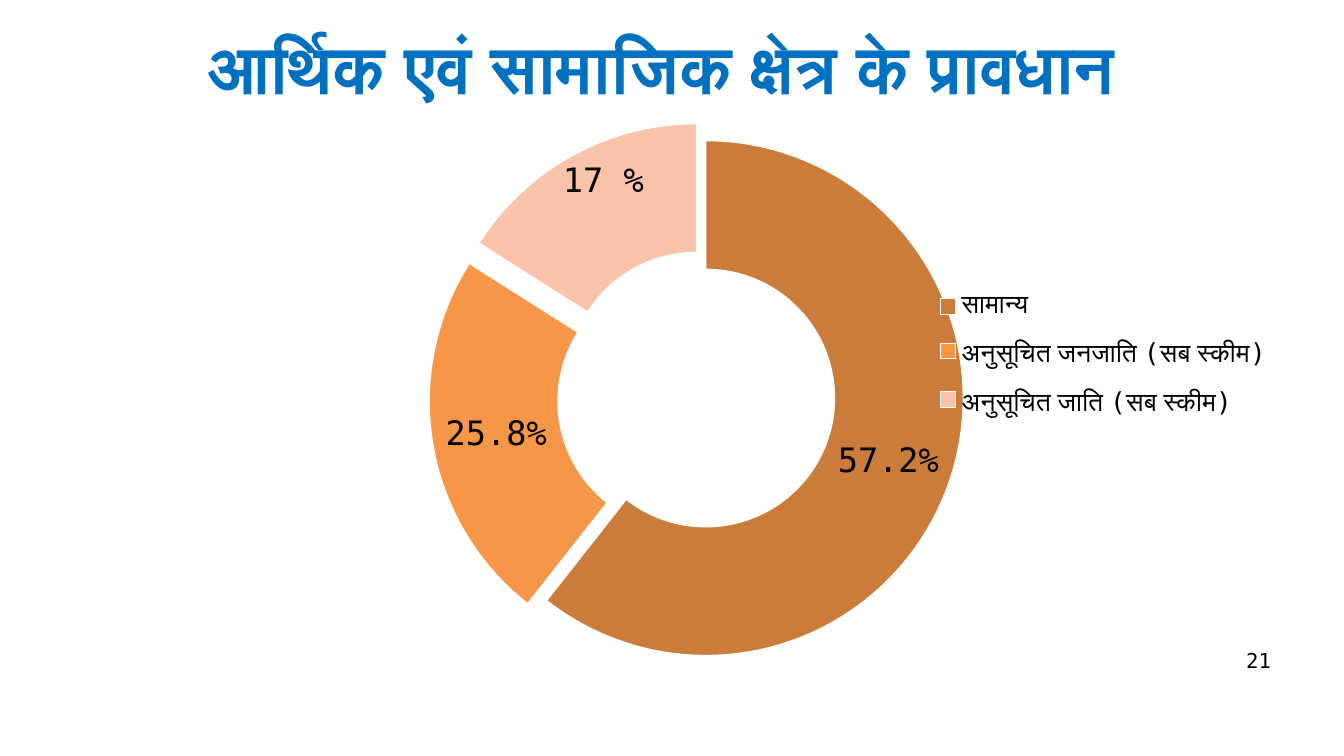
from dataclasses import dataclass

from lxml import etree
from pptx import Presentation
from pptx.chart.data import CategoryChartData
from pptx.dml.color import RGBColor
from pptx.enum.chart import XL_CHART_TYPE, XL_LEGEND_POSITION
from pptx.enum.text import MSO_ANCHOR, PP_ALIGN
from pptx.oxml.ns import qn
from pptx.util import Cm, Pt

DOUGHNUT = XL_CHART_TYPE.DOUGHNUT
LEGEND_RIGHT = XL_LEGEND_POSITION.RIGHT
MIDDLE = MSO_ANCHOR.MIDDLE
CENTER, RIGHT = PP_ALIGN.CENTER, PP_ALIGN.RIGHT
FONT = "DejaVu Sans Mono"
BLACK, WHITE, BLUE = "000000", "FFFFFF", "0070C0"
EXPLOSION = 15


@dataclass
class Box:
    left: float
    top: float
    width: float
    height: float

    def lengths(self) -> list:
        return [Cm(v) for v in (self.left, self.top, self.width, self.height)]


@dataclass
class Caption:
    text: str
    box: Box
    align: int
    style: dict


@dataclass
class Sector:
    category: str
    share: float
    label: str
    color: str
    explosion: int = EXPLOSION
    label_rise: float = 0


CAPTIONS = [
    Caption("आर्थिक एवं सामाजिक क्षेत्र के प्रावधान", Box(0, 0.34, 25, 1.83),
            CENTER, {"size": Pt(36), "bold": True, "color": BLUE}),
    Caption("21", Box(22.57, 11.94, 1.7, 1.09),
            RIGHT, {"size": Pt(11), "color": BLACK}),
]
SECTORS = [
    Sector("सामान्य ", 0.606, "57.2%", "CB7C3A", explosion=0),
    Sector("अनुसूचित जनजाति (सब स्कीम) ", 0.234, "25.8%", "F79646"),
    Sector("अनुसूचित जाति (सब स्कीम) ", 0.16, "17 %", "F9C3A9", label_rise=0.05),
]
CHART_BOX = Box(0.43, 2.06, 24.13, 11.63)
PLOT_AREA = Box(0.07, 0.02, 0.93, 0.9)
LEGEND_AREA = Box(0.72, 0.27, 0.27, 0.26)


def rgb(value: str) -> RGBColor:
    return RGBColor.from_string(value)


def style_font(font, style: dict) -> None:
    for name, value in {"name": FONT, **style}.items():
        if name == "color":
            font.color.rgb = rgb(value)
        else:
            setattr(font, name, value)


def manual_layout(settings: dict):
    layout = etree.Element(qn("c:layout"))
    manual = etree.SubElement(layout, qn("c:manualLayout"))
    for name, value in settings.items():
        etree.SubElement(manual, qn(f"c:{name}")).set("val", str(value))
    return layout


def edge_settings(area: Box) -> dict:
    return {"xMode": "edge", "yMode": "edge", "x": area.left,
            "y": area.top, "w": area.width, "h": area.height}


def place_chart_parts(chart) -> None:
    for stale in chart.element.xpath(".//c:plotArea/c:layout | .//c:legend/c:layout"):
        stale.getparent().remove(stale)
    plot_layout = manual_layout({"layoutTarget": "inner", **edge_settings(PLOT_AREA)})
    chart.element.xpath(".//c:plotArea")[0].insert(0, plot_layout)
    overlay = chart.element.xpath(".//c:legend/c:overlay")[0]
    overlay.addprevious(manual_layout(edge_settings(LEGEND_AREA)))


def explosion_of(amount: int):
    return etree.Element(qn("c:explosion"), val=str(amount))


def explode_sectors(chart) -> None:
    points = chart.element.xpath(".//c:ser/c:dPt")
    points[0].addprevious(explosion_of(EXPLOSION))
    for point, sector in zip(points, SECTORS):
        point.find(qn("c:spPr")).addprevious(explosion_of(sector.explosion))


def raise_labels(chart) -> None:
    for label_index, sector in zip(chart.element.xpath(".//c:dLbl/c:idx"), SECTORS):
        if sector.label_rise:
            label_index.addnext(manual_layout({"x": 0, "y": -sector.label_rise}))


def draw_caption(slide, caption: Caption) -> None:
    frame = slide.shapes.add_textbox(*caption.box.lengths()).text_frame
    frame.word_wrap = True
    frame.vertical_anchor = MIDDLE
    paragraph = frame.paragraphs[0]
    paragraph.alignment = caption.align
    run = paragraph.add_run()
    run.text = caption.text
    style_font(run.font, caption.style)


def draw_sector(point, sector: Sector) -> None:
    point.format.fill.solid()
    point.format.fill.fore_color.rgb = rgb(sector.color)
    point.format.line.color.rgb = rgb(WHITE)
    point.format.line.width = Pt(0.75)
    run = point.data_label.text_frame.paragraphs[0].add_run()
    run.text = sector.label
    style_font(run.font, {"size": Pt(18), "color": BLACK})


def draw_provision_chart(slide) -> None:
    provisions = CategoryChartData(number_format="0.00%")
    provisions.categories = [sector.category for sector in SECTORS]
    provisions.add_series("Series 1", [sector.share for sector in SECTORS])
    chart = slide.shapes.add_chart(DOUGHNUT, *CHART_BOX.lengths(), provisions).chart
    style_font(chart.font, {"size": Pt(18), "color": BLACK})
    chart.has_title = False
    chart.has_legend = True
    chart.legend.position = LEGEND_RIGHT
    chart.legend.include_in_layout = False
    style_font(chart.legend.font, {"size": Pt(14), "color": BLACK})
    place_chart_parts(chart)

    plot = chart.plots[0]
    plot.vary_by_categories = True
    shares = plot.series[0]
    for labels in (plot.data_labels, shares.data_labels):
        labels.show_percentage = False
        labels.show_value = True
        labels.number_format = "0.00%"
        labels.number_format_is_linked = False
    for index, sector in enumerate(SECTORS):
        draw_sector(shares.points[index], sector)
    explode_sectors(chart)
    raise_labels(chart)
    chart.element.xpath(".//c:holeSize")[0].set("val", "17")


def main() -> None:
    deck = Presentation()
    deck.slide_width, deck.slide_height = Cm(25.4), Cm(14.29)
    slide = deck.slides.add_slide(deck.slide_layouts[6])
    draw_provision_chart(slide)
    for caption in CAPTIONS:
        draw_caption(slide, caption)
    deck.save("out.pptx")


if __name__ == "__main__":
    main()
